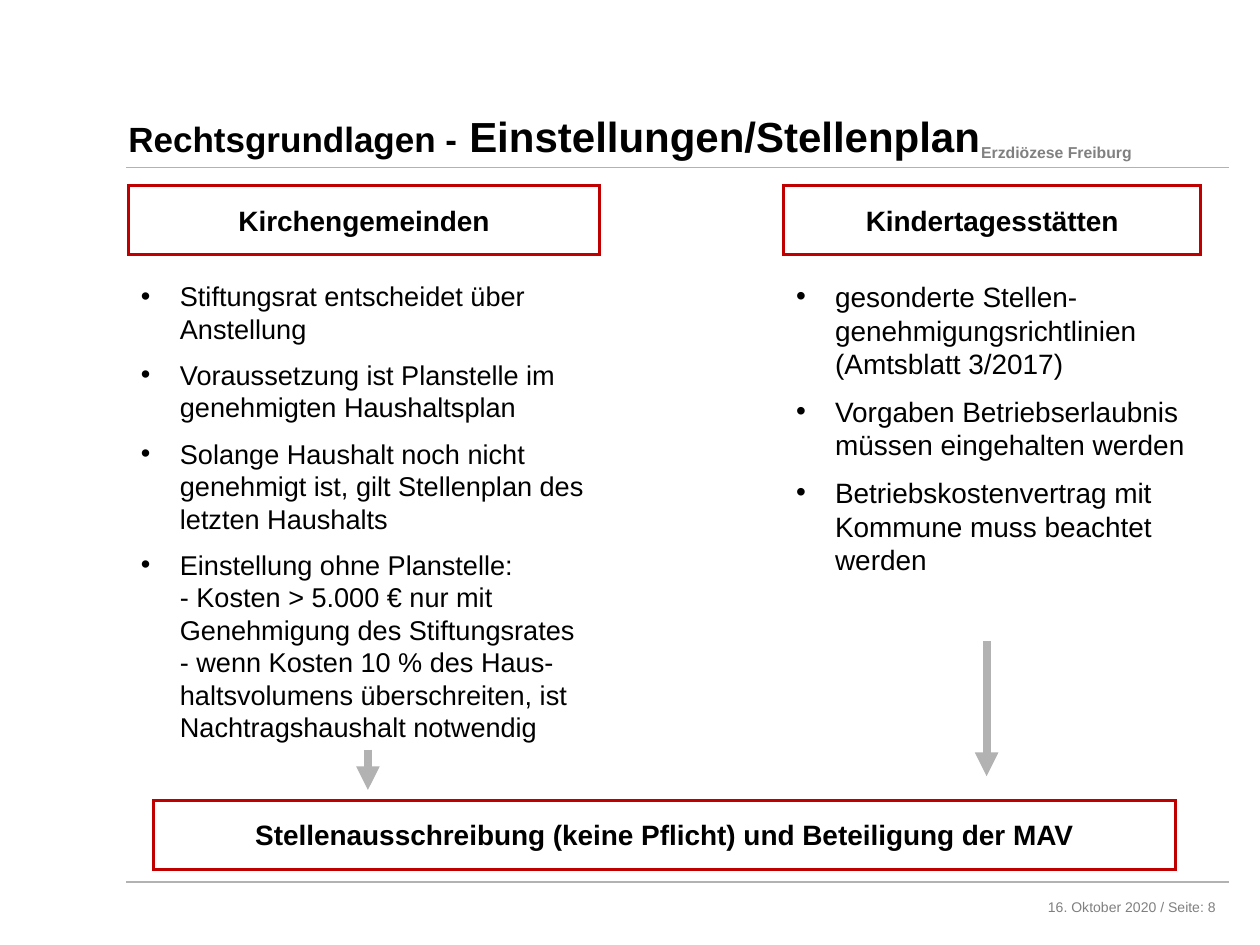
import copy

import pptx
import pptx.dml.color
import pptx.enum.shapes
import pptx.enum.text
import pptx.oxml
import pptx.oxml.ns
import pptx.util
from pptx.util import Inches

BLACK = pptx.dml.color.RGBColor(0x00, 0x00, 0x00)
GREY = pptx.dml.color.RGBColor(0x80, 0x80, 0x80)
RULE_GREY = pptx.dml.color.RGBColor(0xB2, 0xB2, 0xB2)
RED = pptx.dml.color.RGBColor(0xC0, 0x00, 0x00)
ALIGN = pptx.enum.text.PP_ALIGN
HEADER_HEIGHT = 0.55

PARISH_POINTS = [
    "Stiftungsrat entscheidet über Anstellung",
    "Voraussetzung ist Planstelle im genehmigten Haushaltsplan",
    "Solange Haushalt noch nicht genehmigt ist, gilt Stellenplan des letzten Haushalts",
    "Einstellung ohne Planstelle:\v- Kosten > 5.000 € nur mit Genehmigung des Stiftungsrates"
    "\v- wenn Kosten 10 % des Haus-haltsvolumens überschreiten, ist Nachtragshaushalt notwendig",
]
DAYCARE_POINTS = [
    "gesonderte Stellen-genehmigungsrichtlinien (Amtsblatt 3/2017)",
    "Vorgaben Betriebserlaubnis müssen eingehalten werden",
    "Betriebskostenvertrag mit Kommune muss beachtet werden",
]


def drawing_element(tag, **attributes):
    """Return a new DrawingML element with the given attributes."""
    element = pptx.oxml.parse_xml(f"<a:{tag} {pptx.oxml.ns.nsdecls('a')}/>")
    for name, value in attributes.items():
        element.set(name, value)
    return element


def style_run(run, size, color=BLACK, bold=False):
    """Set the typeface, size, colour and weight of a run."""
    run.font.name = "Arial"
    run.font.size = pptx.util.Pt(size)
    run.font.color.rgb = color
    run.font.bold = bold


def add_line(slide, start, end, width, arrow=False):
    """Draw a grey line, with an arrowhead at its end if asked for."""
    line = slide.shapes.add_connector(
        pptx.enum.shapes.MSO_CONNECTOR.STRAIGHT, *map(Inches, start + end))
    line.line.color.rgb = RULE_GREY
    line.line.width = pptx.util.Pt(width)
    if arrow:
        line.line._get_or_add_ln().append(drawing_element("tailEnd", type="triangle"))
    line._element.spPr.append(drawing_element("effectLst"))


def add_text(slide, box, runs, color=BLACK, bold=False, align=ALIGN.LEFT, wrap=True):
    """Place one paragraph made of (text, size) runs in a box."""
    frame = slide.shapes.add_textbox(*map(Inches, box)).text_frame
    frame.word_wrap = wrap
    paragraph = frame.paragraphs[0]
    paragraph.alignment = align
    for text, size in runs:
        run = paragraph.add_run()
        run.text = text
        style_run(run, size, color, bold)


def add_framed_label(slide, left, top, width, label):
    """Place a bold centred label in a sharp-cornered red frame."""
    frame = slide.shapes.add_shape(
        pptx.enum.shapes.MSO_SHAPE.RECTANGLE,
        *map(Inches, (left, top, width, HEADER_HEIGHT)))
    frame.shadow.inherit = False
    frame.fill.background()
    frame.line.color.rgb = RED
    frame.line.width = pptx.util.Pt(1.75)
    frame.line._get_or_add_ln().append(drawing_element("miter", lim="800000"))
    frame.text_frame.text = label
    frame.text_frame.word_wrap = False
    frame.text_frame.vertical_anchor = pptx.enum.text.MSO_ANCHOR.MIDDLE
    paragraph = frame.text_frame.paragraphs[0]
    paragraph.alignment = ALIGN.CENTER
    style_run(paragraph.runs[0], 16, bold=True)


def add_bullets(slide, box, points, size):
    """Place a bulleted list with hanging indents."""
    frame = slide.shapes.add_textbox(*map(Inches, box)).text_frame
    frame.word_wrap = True
    for index, point in enumerate(points):
        paragraph = frame.add_paragraph() if index else frame.paragraphs[0]
        paragraph.text = point
        if index:
            paragraph.space_before = pptx.util.Pt(size / 2)
        properties = paragraph._p.get_or_add_pPr()
        properties.set("marL", str(Inches(0.31)))
        properties.set("indent", str(-Inches(0.31)))
        properties.append(drawing_element("buFont", typeface="Arial"))
        properties.append(drawing_element("buChar", char="•"))
        for run in paragraph.runs:
            style_run(run, size)
        for line_break in paragraph._p.findall(pptx.oxml.ns.qn("a:br")):
            line_break.append(copy.deepcopy(paragraph.runs[0]._r.rPr))


def add_column(slide, left, top, header_width, list_width, list_height, header, points, size):
    """Place a framed header with its bulleted list below."""
    add_framed_label(slide, left, top, header_width, header)
    add_bullets(slide, (left, top + 0.7, list_width, list_height), points, size)


def add_page_frame(slide, left, right, top, bottom):
    """Place the rules, the sender and the footer around the content."""
    for y in (bottom, top):
        add_line(slide, (left, y), (right, y), 0.75)
    add_text(slide, (right - 2.25, top - 0.25, 1.58, 0.25), [("Erzdiözese Freiburg", 9)],
             GREY, bold=True, align=ALIGN.RIGHT, wrap=False)
    add_text(slide, (right - 2.83, bottom + 0.08, 2.83, 0.25),
             [("16. Oktober 2020 / Seite: 8", 8)], GREY, align=ALIGN.RIGHT)


def main():
    """Build the slide and save it."""
    presentation = pptx.Presentation()
    presentation.slide_width, presentation.slide_height = Inches(10), Inches(7.5)
    slide = presentation.slides.add_slide(presentation.slide_layouts[6])
    add_page_frame(slide, 1, 9.75, 1.33, 7)
    add_text(slide, (0.92, 0.83, 7.21, 0.77),
             [("Rechtsgrundlagen -", 20), (" Einstellungen/Stellenplan", 24)],
             bold=True, wrap=False)
    add_column(slide, 1.02, 1.47, 3.74, 3.9, 4.01, "Kirchengemeinden", PARISH_POINTS, 15.5)
    add_column(slide, 6.22, 1.47, 3.31, 3.46, 2.52, "Kindertagesstätten", DAYCARE_POINTS, 16)
    add_framed_label(slide, 1.22, 6.35, 8.11,
                     "Stellenausschreibung (keine Pflicht) und Beteiligung der MAV")
    for x, start, end in ((2.92, 5.95, 6.27), (7.83, 5.09, 6.16)):
        add_line(slide, (x, start), (x, end), 4.5, arrow=True)
    presentation.save("out.pptx")


if __name__ == "__main__":
    main()
